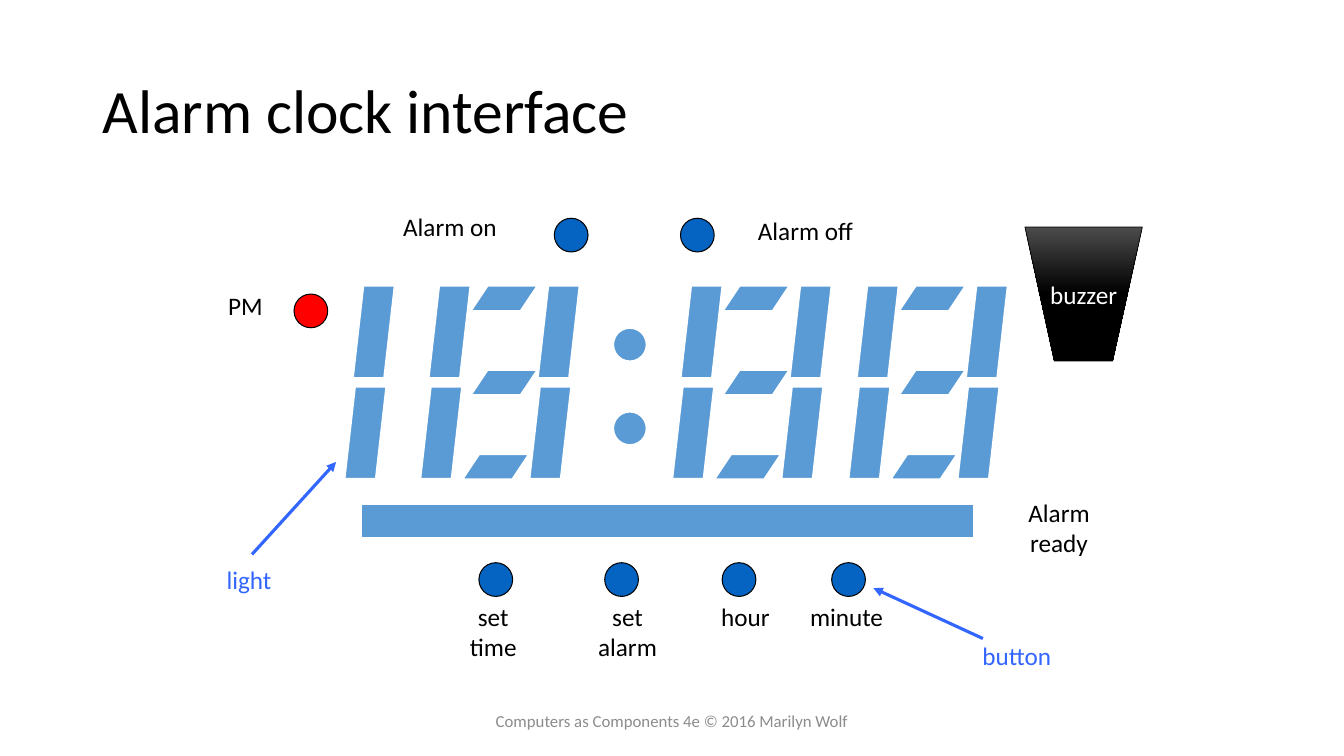
"""Builds the alarm clock interface slide."""
from lxml import etree
from pptx import Presentation
from pptx.dml.color import RGBColor
from pptx.enum.shapes import MSO_CONNECTOR, MSO_SHAPE
from pptx.enum.text import MSO_ANCHOR, MSO_AUTO_SIZE, PP_ALIGN
from pptx.oxml.ns import qn
from pptx.util import Cm, Pt

ELLIPSE = MSO_SHAPE.OVAL
PARALLELOGRAM = MSO_SHAPE.PARALLELOGRAM
RECTANGLE = MSO_SHAPE.RECTANGLE
STRAIGHT = MSO_CONNECTOR.STRAIGHT
MIDDLE = MSO_ANCHOR.MIDDLE
GROW = MSO_AUTO_SIZE.SHAPE_TO_FIT_TEXT
LEFT = PP_ALIGN.LEFT
CENTER = PP_ALIGN.CENTER

BLACK = RGBColor(0x00, 0x00, 0x00)
WHITE = RGBColor(0xFF, 0xFF, 0xFF)
DISPLAY_BLUE = RGBColor(0x5B, 0x9B, 0xD5)
BUTTON_BLUE = RGBColor(0x05, 0x63, 0xC1)
NOTE_BLUE = RGBColor(0x33, 0x66, 0xFF)
RED = RGBColor(0xFF, 0x00, 0x00)
GRAY = RGBColor(0x8C, 0x8C, 0x8C)
CHARCOAL = RGBColor(0x4B, 0x4B, 0x4B)

FONT = "Calibri"
DIGIT_TOP = 7.2
DIGIT_LEFTS = (10.8, 17.15, 21.59)
COLUMN_GAP = 2.75
DOT_SIZE = 0.85
BUTTON_TOP = 14.18
CAPTION_TOP = 15.03


class ClockSlide:
    """Holds the style and the current slide, and draws each kind of element."""

    def __init__(self, presentation):
        self.slide = presentation.slides.add_slide(presentation.slide_layouts[5])
        self.shapes = self.slide.shapes

    def format_text(self, text_frame, size, color, alignment):
        for paragraph in text_frame.paragraphs:
            paragraph.alignment = alignment
            for run in paragraph.runs:
                run.font.name = FONT
                run.font.size = Pt(size)
                run.font.color.rgb = color

    def title(self, text):
        title = self.shapes.title
        title.left, title.top = Cm(2.33), Cm(1.01)
        title.width, title.height = Cm(29.21), Cm(3.68)
        title.text_frame.text = text
        title.text_frame.vertical_anchor = MIDDLE
        title.text_frame.paragraphs[0].line_spacing = 0.9
        self.format_text(title.text_frame, 44, BLACK, LEFT)

    def shape(self, kind, left, top, width, height, fill=DISPLAY_BLUE,
              line=WHITE, line_width=1.5):
        shape = self.shapes.add_shape(
            kind, Cm(left), Cm(top), Cm(width), Cm(height))
        shape.shadow.inherit = False
        shape.fill.solid()
        shape.fill.fore_color.rgb = fill
        shape.line.color.rgb = line
        shape.line.width = Pt(line_width)
        return shape

    def lamp(self, left, top, fill=BUTTON_BLUE):
        self.shape(ELLIPSE, left, top, DOT_SIZE, DOT_SIZE, fill, BLACK, 0.75)

    def column(self, left):
        for x, y in ((left, DIGIT_TOP), (left - 0.21, DIGIT_TOP + 2.54)):
            segment = self.shape(PARALLELOGRAM, x, y, 1.06, 2.33)
            segment.adjustments[0] = 0.25

    def digit(self, left):
        self.column(left)
        self.column(left + COLUMN_GAP)
        for row, offset in enumerate((1.06, 1.06, 0.85)):
            bar = self.shape(PARALLELOGRAM, left + offset,
                             DIGIT_TOP + row * 2.12, 1.69, 0.64)
            bar.adjustments[0] = 0.667

    def label(self, text, left, top, width, color=BLACK, alignment=LEFT):
        height = 1.02 if "\n" not in text else 1.8
        box = self.shapes.add_textbox(Cm(left), Cm(top), Cm(width), Cm(height))
        frame = box.text_frame
        frame.text = text
        frame.word_wrap = False
        frame.auto_size = GROW
        self.format_text(frame, 18, color, alignment)

    def arrow(self, start_x, start_y, end_x, end_y):
        connector = self.shapes.add_connector(
            STRAIGHT, Cm(start_x), Cm(start_y), Cm(end_x), Cm(end_y))
        connector.line.color.rgb = NOTE_BLUE
        connector.line.width = Pt(2.25)
        line = connector.line._get_or_add_ln()
        etree.SubElement(line, qn("a:tailEnd"), type="triangle")
        etree.SubElement(connector._element.spPr, qn("a:effectLst"))

    def buzzer(self, text):
        builder = self.shapes.build_freeform(Cm(25.83), Cm(5.72))
        builder.add_line_segments(
            [(Cm(26.57), Cm(9.1)), (Cm(28.04), Cm(9.1)), (Cm(28.79), Cm(5.72))])
        shape = builder.convert_to_shape()
        shape.shadow.inherit = False
        shape.fill.gradient()
        shape.fill.gradient_angle = 270
        stops = zip(shape.fill.gradient_stops, (0, 0.5), (CHARCOAL, BLACK))
        for stop, position, color in stops:
            stop.position = position
            stop.color.rgb = color
        shape.line.color.rgb = BLACK
        shape.line.width = Pt(0.5)
        shape.text_frame.text = text
        shape.text_frame.word_wrap = False
        shape.text_frame.vertical_anchor = MIDDLE
        self.format_text(shape.text_frame, 18, WHITE, CENTER)

    def footer(self, text):
        box = self.shapes.add_textbox(Cm(11.22), Cm(17.65), Cm(11.43), Cm(1.01))
        box.text_frame.text = text
        box.text_frame.word_wrap = True
        box.text_frame.vertical_anchor = MIDDLE
        self.format_text(box.text_frame, 12, GRAY, CENTER)


def main():
    presentation = Presentation()
    presentation.slide_width, presentation.slide_height = Cm(33.87), Cm(19.05)
    clock = ClockSlide(presentation)
    clock.title("Alarm clock interface")

    clock.column(8.89)
    for left in DIGIT_LEFTS:
        clock.digit(left)
    for top in (8.26, 10.37):
        clock.shape(ELLIPSE, 15.45, top, DOT_SIZE, DOT_SIZE)
    clock.shape(RECTANGLE, 9.1, 12.7, 15.45, 0.85)

    for left in (13.97, 17.15):
        clock.lamp(left, 5.5)
    clock.label("Alarm on", 9.91, 5.21, 2.9)
    clock.label("Alarm off", 18.85, 5.29, 2.95)
    clock.lamp(7.41, 7.41, RED)
    clock.label("PM", 5.5, 7.2, 1.4)
    clock.label("Alarm\nready", 25.65, 12.4, 2.08, alignment=CENTER)

    buttons = (
        ("set\ntime", 12.07, 11.58, 1.7),
        ("set\nalarm", 15.24, 14.81, 2.01),
        ("hour", 18.2, 17.91, 1.75),
        ("minute", 20.96, 20.14, 2.39),
    )
    for text, button_left, caption_left, width in buttons:
        clock.lamp(button_left, BUTTON_TOP)
        clock.label(text, caption_left, CAPTION_TOP, width, alignment=CENTER)

    clock.arrow(6.35, 13.97, 8.47, 11.64)
    clock.label("light", 5.46, 14.1, 1.65, NOTE_BLUE)
    clock.arrow(24.77, 16.09, 22.01, 14.82)
    clock.label("button", 24.51, 16, 2.29, NOTE_BLUE)
    clock.buzzer("buzzer")
    clock.footer("Computers as Components 4e © 2016 Marilyn Wolf")
    presentation.save("out.pptx")


if __name__ == "__main__":
    main()
